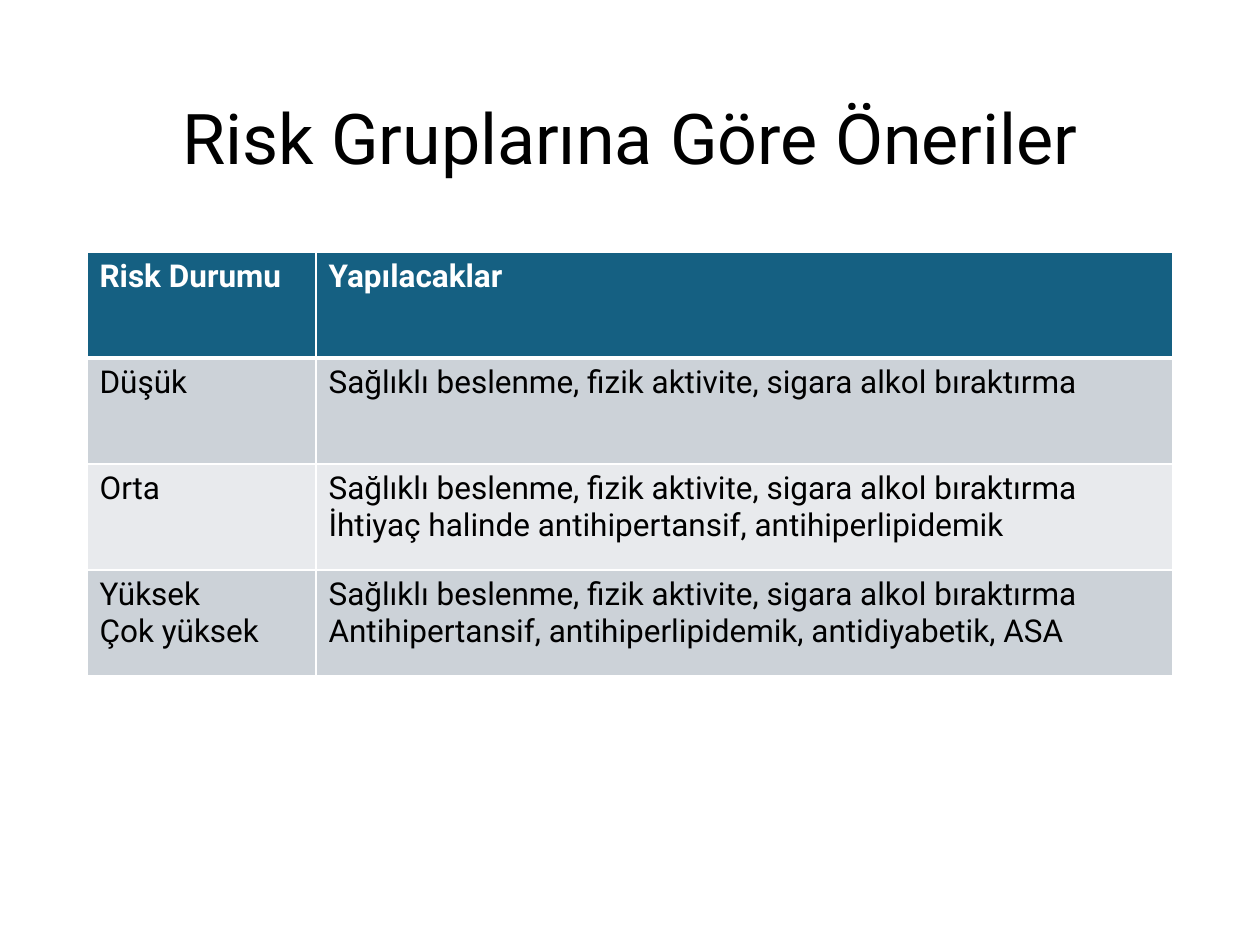
from dataclasses import dataclass

from lxml import etree
from pptx import Presentation
from pptx import util as u
from pptx.dml.color import RGBColor
from pptx.enum import text
from pptx.oxml import ns

EMU_PER_PX = 914400 / 126


@dataclass(frozen=True)
class Theme:
    font: str = "Roboto"
    title_size: int = 40
    cell_size: int = 18
    ink: str = "000000"
    white: str = "FFFFFF"
    header: str = "156082"
    bands: tuple[str, str] = ("CCD2D8", "E8EAED")
    thin: int = 1
    thick: int = 3


@dataclass(frozen=True)
class Advice:
    risk: str
    actions: str


@dataclass(frozen=True)
class CellStyle:
    fill: str
    ink: str
    bold: bool
    top: int
    bottom: int


THEME = Theme()
LEFT, WIDTH = 87, 1086
TITLE_TOP, TITLE_HEIGHT = 50, 183
TABLE_TOP, ROW_HEIGHT = 252, 106
COLUMNS = (229, 857)

LIFESTYLE = "Sağlıklı beslenme, fizik aktivite, sigara alkol bıraktırma"
ROWS = (
    Advice("Risk Durumu", "Yapılacaklar"),
    Advice("Düşük", LIFESTYLE),
    Advice("Orta", f"{LIFESTYLE}\nİhtiyaç halinde antihipertansif, antihiperlipidemik"),
    Advice("Yüksek\nÇok yüksek",
           f"{LIFESTYLE}\nAntihipertansif, antihiperlipidemik, antidiyabetik, ASA"),
)


def px(length: int) -> u.Emu:
    return u.Emu(round(length * EMU_PER_PX))


def style_font(font, size: int, color: str, bold: bool = False) -> None:
    font.name = THEME.font
    font.size = u.Pt(size)
    font.bold = bold
    font.color.rgb = RGBColor.from_string(color)


def draw_borders(cell, top: int, bottom: int) -> None:
    properties = cell._tc.get_or_add_tcPr()
    widths = {"L": THEME.thin, "R": THEME.thin, "T": top, "B": bottom}
    for side, width in widths.items():
        line = etree.SubElement(properties, ns.qn(f"a:ln{side}"), w=str(u.Pt(width)))
        fill = etree.SubElement(line, ns.qn("a:solidFill"))
        etree.SubElement(fill, ns.qn("a:srgbClr"), val=THEME.white)


def fill_cell(cell, words: str, style: CellStyle) -> None:
    draw_borders(cell, style.top, style.bottom)
    cell.fill.solid()
    cell.fill.fore_color.rgb = RGBColor.from_string(style.fill)
    cell.text = words
    for para in cell.text_frame.paragraphs:
        style_font(para.font, THEME.cell_size, style.ink, style.bold)


def row_style(index: int) -> CellStyle:
    if index == 0:
        return CellStyle(THEME.header, THEME.white, True, THEME.thin, THEME.thick)
    top = THEME.thick if index == 1 else THEME.thin
    return CellStyle(THEME.bands[(index - 1) % 2], THEME.ink, False, top, THEME.thin)


def add_title(page, words: str) -> None:
    box = page.shapes.title
    box.left, box.top = px(LEFT), px(TITLE_TOP)
    box.width, box.height = px(WIDTH), px(TITLE_HEIGHT)
    frame = box.text_frame
    frame.text = words
    frame.word_wrap = True
    frame.vertical_anchor = text.MSO_ANCHOR.MIDDLE
    para = frame.paragraphs[0]
    para.alignment = text.PP_ALIGN.CENTER
    para.line_spacing = 0.9
    style_font(para.font, THEME.title_size, THEME.ink)


def add_advice_table(page, rows: tuple[Advice, ...]) -> None:
    table = page.shapes.add_table(
        len(rows), len(COLUMNS), px(LEFT), px(TABLE_TOP),
        px(WIDTH), px(ROW_HEIGHT * len(rows))).table
    for column, width in zip(table.columns, COLUMNS):
        column.width = px(width)
    for index, advice in enumerate(rows):
        table.rows[index].height = px(ROW_HEIGHT)
        for column, words in enumerate((advice.risk, advice.actions)):
            fill_cell(table.cell(index, column), words, row_style(index))


def main() -> None:
    deck = Presentation()
    deck.slide_width, deck.slide_height = u.Inches(10), u.Inches(7.5)
    page = deck.slides.add_slide(deck.slide_layouts[5])

    # Heading
    add_title(page, "Risk Gruplarına Göre Öneriler")

    # Advice for each risk group
    add_advice_table(page, ROWS)

    deck.save("out.pptx")


if __name__ == "__main__":
    main()
